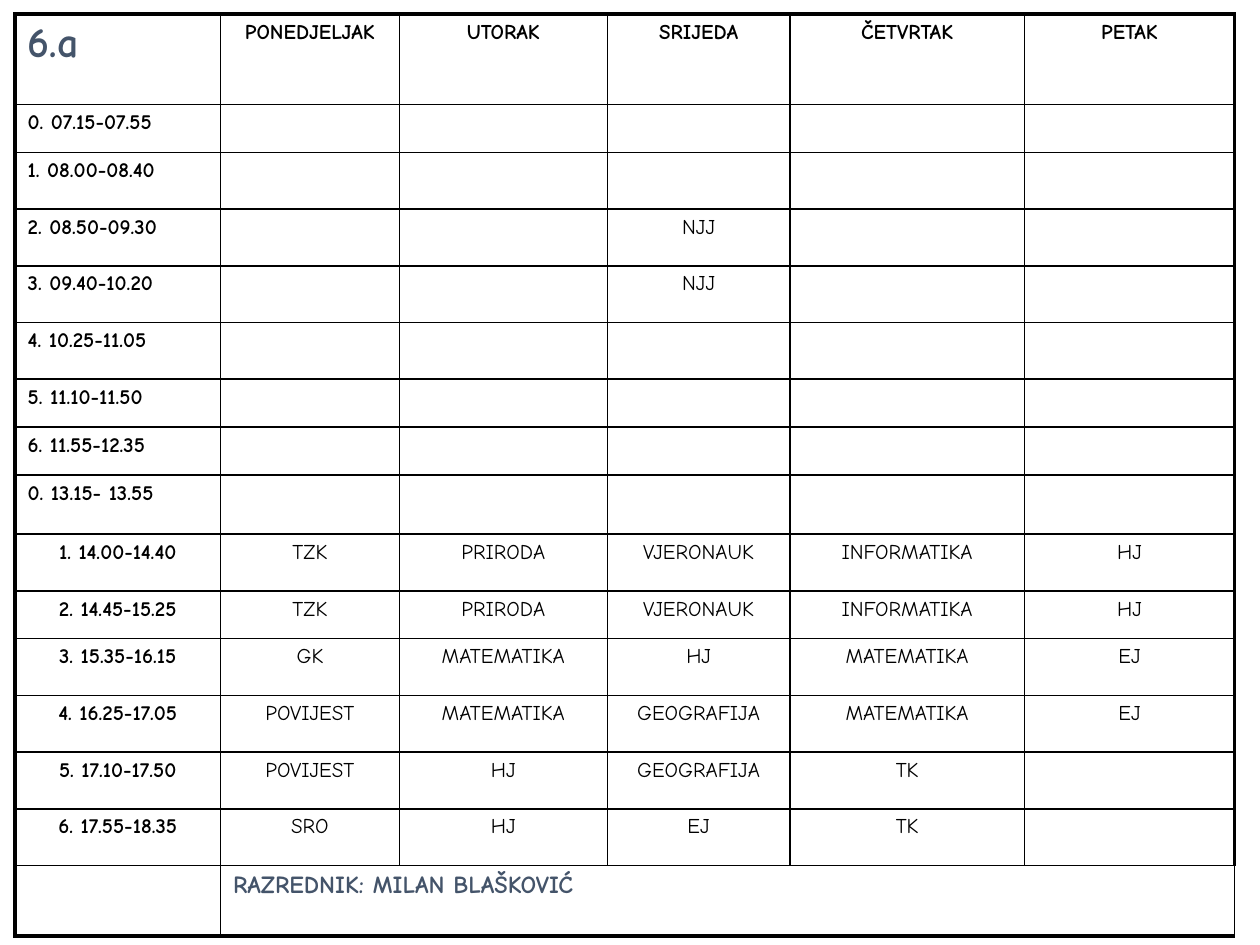
import lxml.etree
import pptx
import pptx.dml.color
import pptx.enum.text
import pptx.oxml.ns
import pptx.util

Inches = pptx.util.Inches
CENTER = pptx.enum.text.PP_ALIGN.CENTER
LEFT = pptx.enum.text.PP_ALIGN.LEFT

COLORS = {"text": "000000", "border": "000000", "accent": "44546A"}
FONT = "Comic Neue"
THIN, THICK = 1, 2.25
BODY_SIZE = 12

COLUMN_WIDTHS = [1.63, 1.42, 1.65, 1.45, 1.86, 1.67]
ROW_HEIGHTS = [0.72, 0.38, 0.45, 0.45, 0.45, 0.45, 0.38, 0.38,
               0.47, 0.45, 0.38, 0.45, 0.45, 0.45, 0.45, 0.56]
FIRST_AFTERNOON_LESSON = 9

TIMETABLE = [
    ["6.a", "PONEDJELJAK", "UTORAK", "SRIJEDA", "ČETVRTAK", "PETAK"],
    ["0. 07.15-07.55", "", "", "", "", ""],
    ["1. 08.00-08.40", "", "", "", "", ""],
    ["2. 08.50-09.30", "", "", "NJJ", "", ""],
    ["3. 09.40-10.20", "", "", "NJJ", "", ""],
    ["4. 10.25-11.05", "", "", "", "", ""],
    ["5. 11.10-11.50", "", "", "", "", ""],
    ["6. 11.55-12.35", "", "", "", "", ""],
    ["0. 13.15- 13.55", "", "", "", "", ""],
    ["1. 14.00-14.40", "TZK", "PRIRODA", "VJERONAUK", "INFORMATIKA", "HJ"],
    ["2. 14.45-15.25", "TZK", "PRIRODA", "VJERONAUK", "INFORMATIKA", "HJ"],
    ["3. 15.35-16.15", "GK", "MATEMATIKA", "HJ", "MATEMATIKA", "EJ"],
    ["4. 16.25-17.05", "POVIJEST", "MATEMATIKA", "GEOGRAFIJA", "MATEMATIKA", "EJ"],
    ["5. 17.10-17.50", "POVIJEST", "HJ", "GEOGRAFIJA", "TK", ""],
    ["6. 17.55-18.35", "SRO", "HJ", "EJ", "TK", ""],
    ["", "RAZREDNIK: MILAN BLAŠKOVIĆ", "", "", "", ""],
]
LAST_ROW = len(TIMETABLE) - 1
LAST_COLUMN = len(COLUMN_WIDTHS) - 1


def add_child(parent, tag, **attributes):
    return lxml.etree.SubElement(parent, pptx.oxml.ns.qn(tag), **attributes)


def write_text(cell, text, size, color, bold, align):
    para = cell.text_frame.paragraphs[0]
    para.alignment = align
    if not text:
        # An empty cell keeps the body size, so that its row does not grow.
        add_child(para._p, "a:endParaRPr", sz=str(BODY_SIZE * 100))
        return
    span = para.add_run()
    span.text = text
    span.font.name = FONT
    span.font.size = pptx.util.Pt(size)
    span.font.bold = bold
    span.font.color.rgb = pptx.dml.color.RGBColor.from_string(COLORS[color])


def set_borders(cell, row, column):
    """Draw thin inner borders and a thick frame around the table."""
    outer_sides = {"L": column == 0, "R": column == LAST_COLUMN,
                   "T": row == 0, "B": row == LAST_ROW}
    properties = cell._tc.get_or_add_tcPr()
    for position, (side, outer) in enumerate(outer_sides.items()):
        width = pptx.util.Pt(THICK if outer else THIN)
        line = add_child(properties, f"a:ln{side}", w=str(int(width)))
        fill = add_child(line, "a:solidFill")
        add_child(fill, "a:srgbClr", val=COLORS["border"])
        # Borders must come before the fill of the cell.
        properties.insert(position, line)


def text_style(row, column):
    """Return size, colour, bold and alignment for a cell."""
    if row == 0 and column == 0:
        return 24, "accent", True, LEFT
    if row == LAST_ROW:
        return 14, "accent", True, LEFT
    bold = row == 0 or column == 0
    morning_time = column == 0 and row < FIRST_AFTERNOON_LESSON
    return BODY_SIZE, "text", bold, LEFT if morning_time else CENTER


def add_timetable(page):
    frame = page.shapes.add_table(
        len(ROW_HEIGHTS), len(COLUMN_WIDTHS), Inches(0.12), Inches(0.11),
        Inches(sum(COLUMN_WIDTHS)), Inches(sum(ROW_HEIGHTS)))
    table = frame.table
    table.first_row = False
    table.horz_banding = False
    for column, width in zip(table.columns, COLUMN_WIDTHS):
        column.width = Inches(width)
    for row, height in zip(table.rows, ROW_HEIGHTS):
        row.height = Inches(height)
    for row, texts in enumerate(TIMETABLE):
        for column, text in enumerate(texts):
            cell = table.cell(row, column)
            cell.fill.background()
            write_text(cell, text, *text_style(row, column))
            set_borders(cell, row, column)
    table.cell(LAST_ROW, 1).merge(table.cell(LAST_ROW, LAST_COLUMN))


def main():
    deck = pptx.Presentation()
    deck.slide_width = Inches(10)
    deck.slide_height = Inches(7.5)
    page = deck.slides.add_slide(deck.slide_layouts[6])
    add_timetable(page)
    deck.save("out.pptx")


if __name__ == "__main__":
    main()
